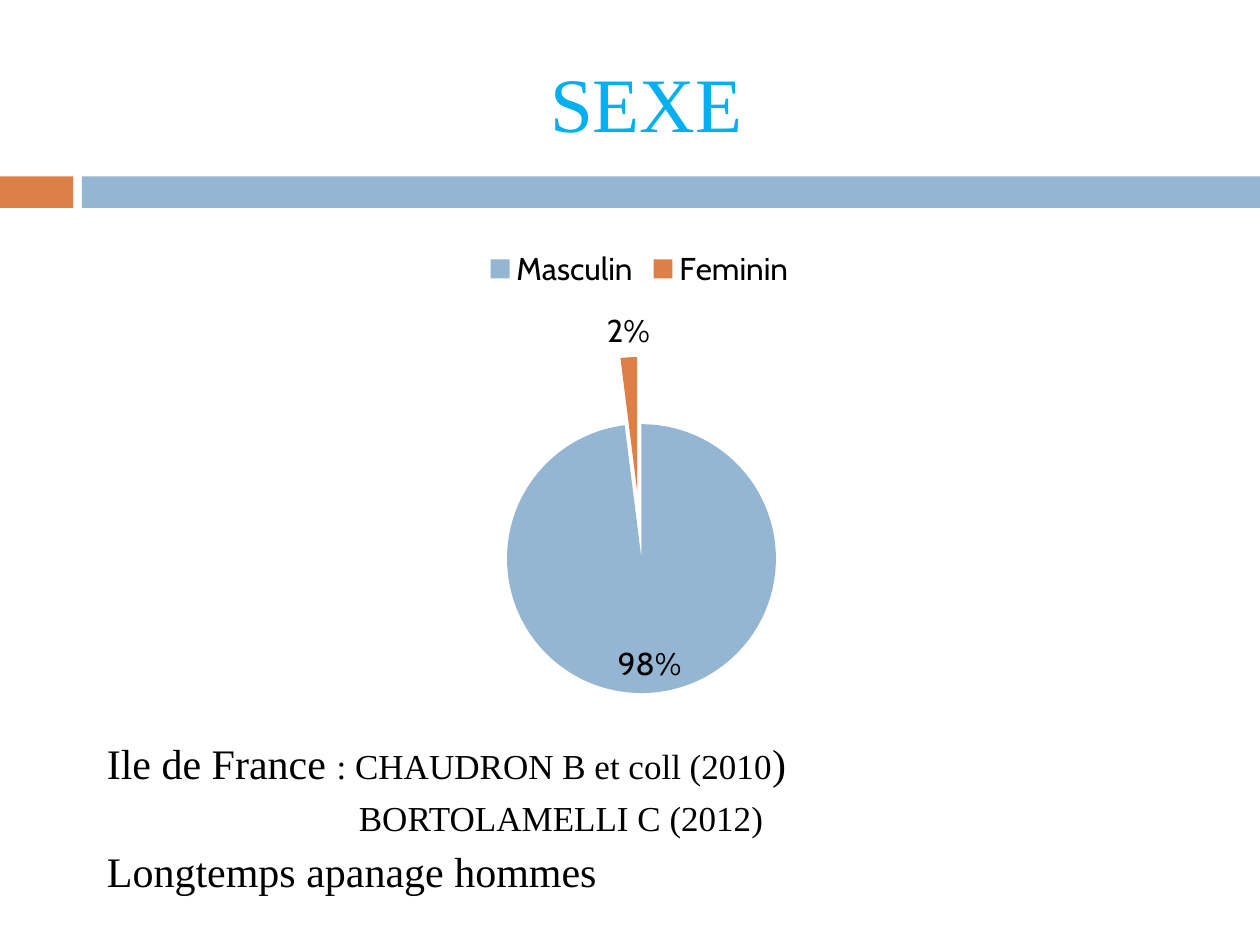
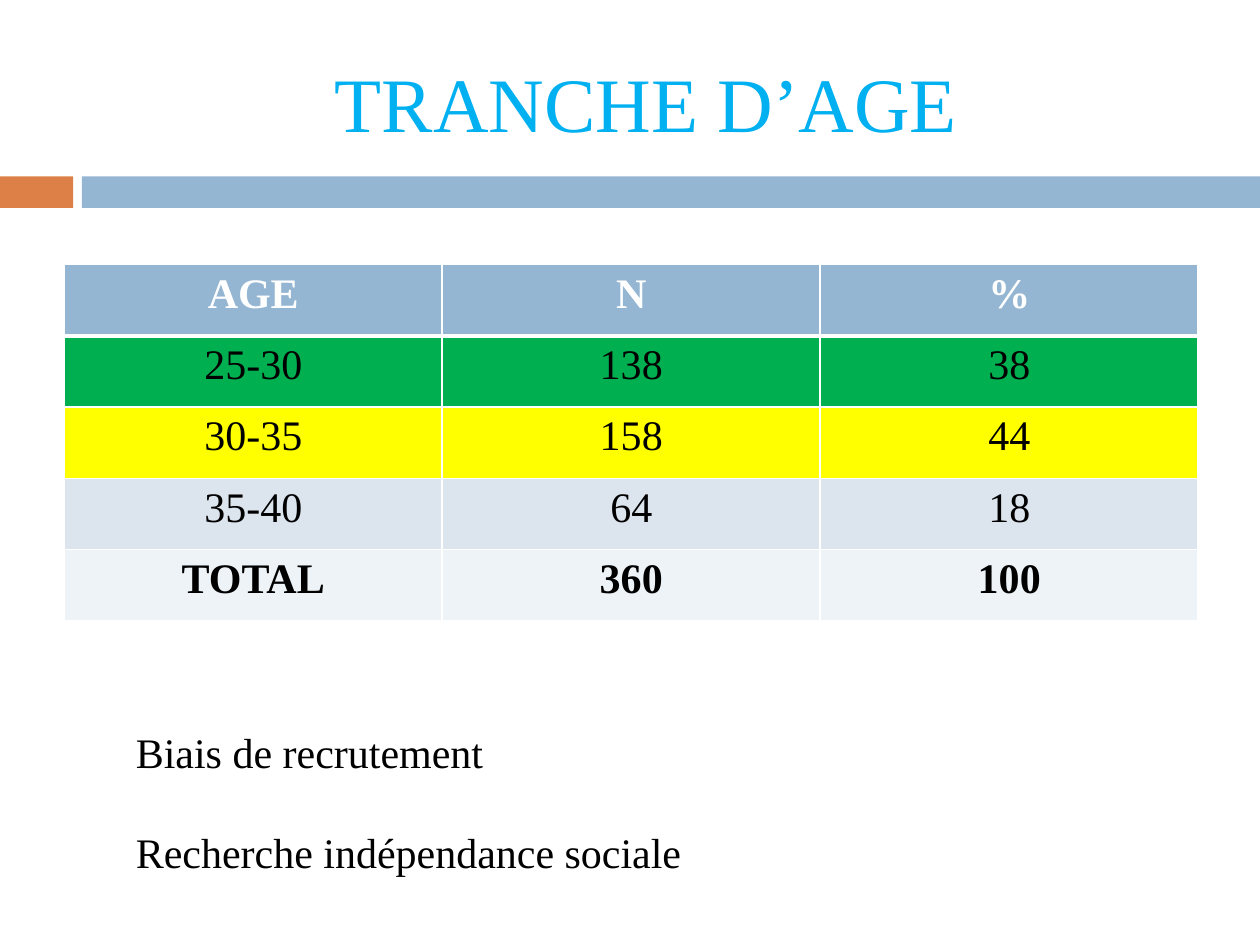
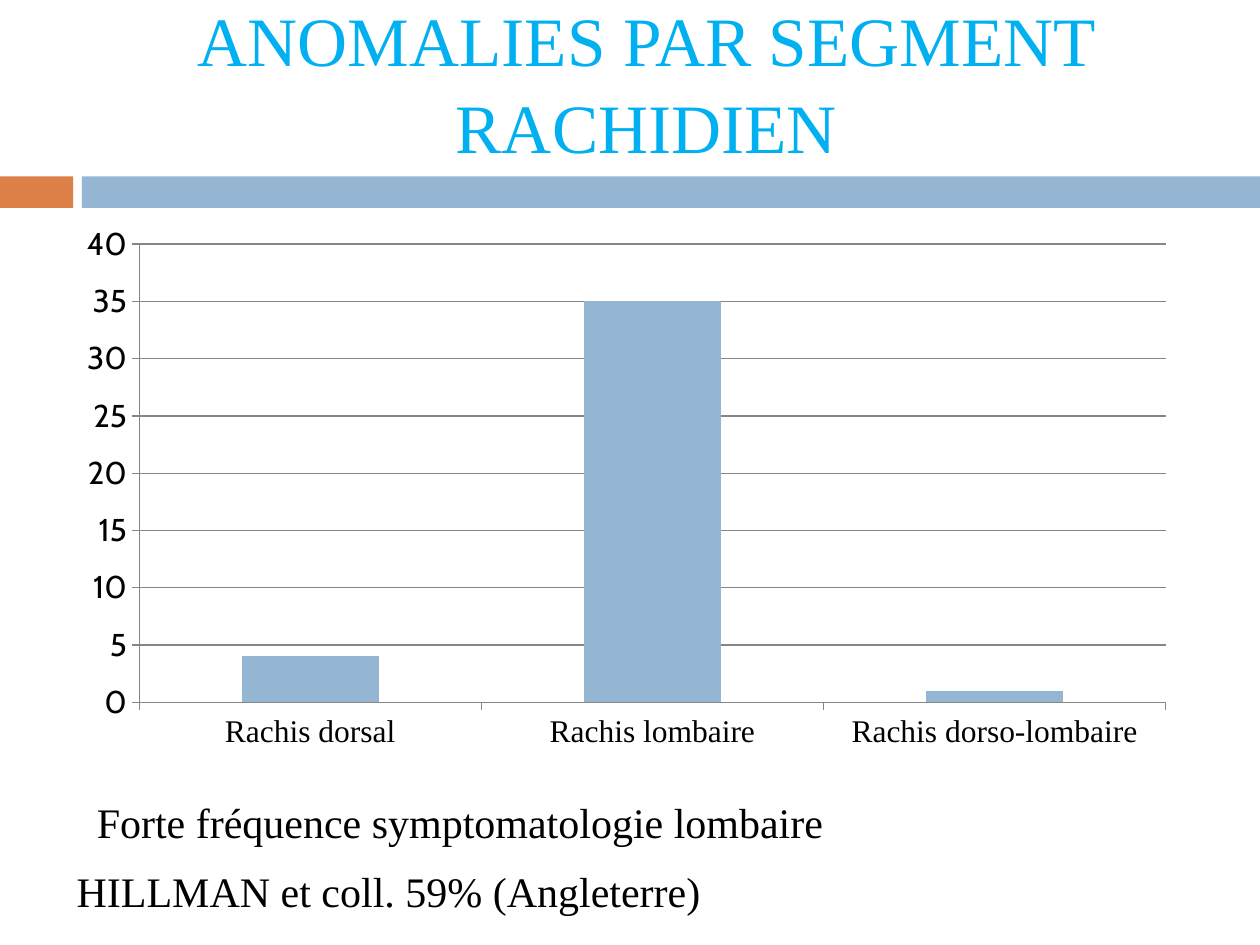
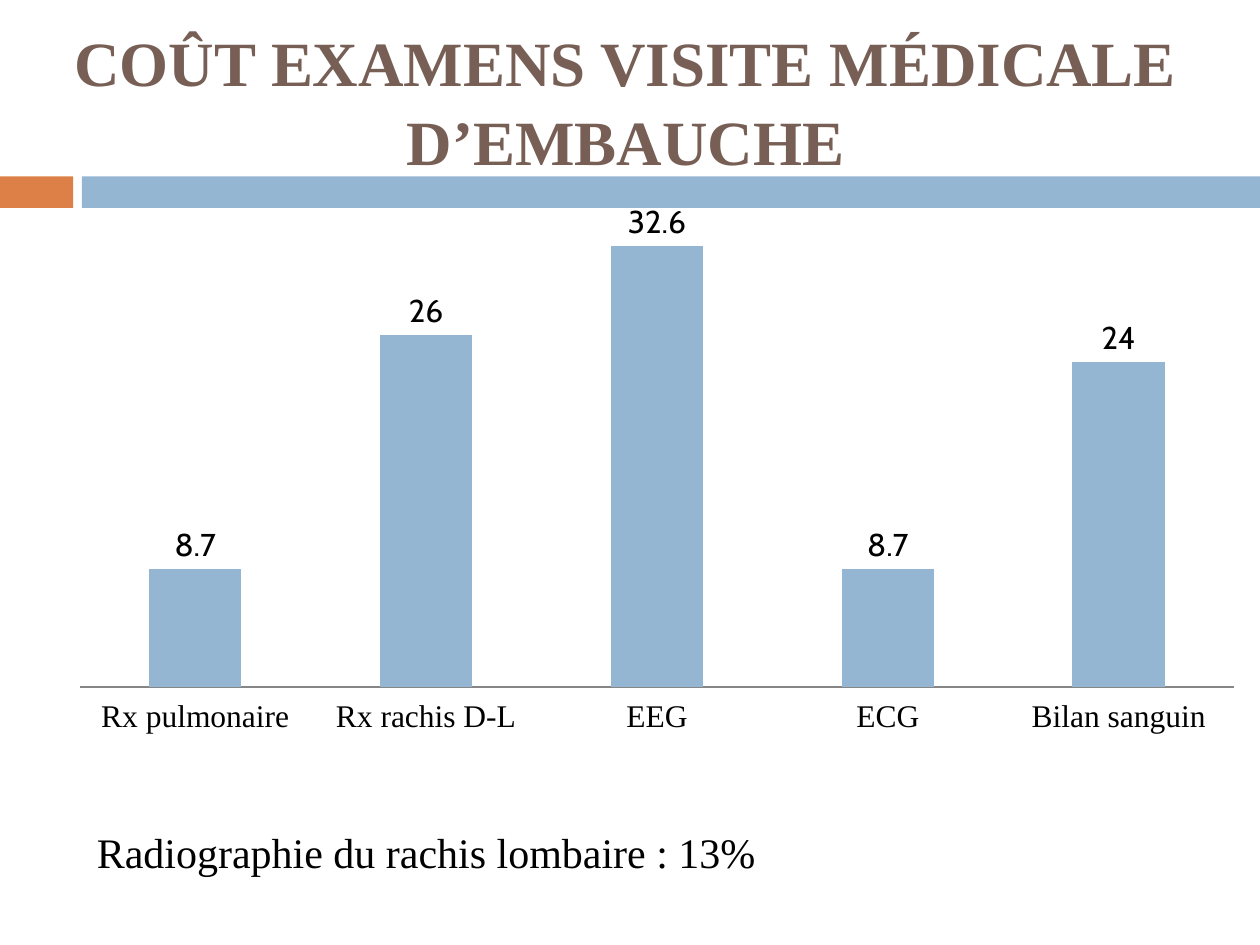
from dataclasses import dataclass
from typing import NamedTuple

from lxml.etree import SubElement
from pptx import Presentation
from pptx.chart.axis import CategoryAxis, ValueAxis
from pptx.chart.chart import Chart
from pptx.chart.data import CategoryChartData
from pptx.dml.color import RGBColor
from pptx.enum.chart import XL_CHART_TYPE, XL_LABEL_POSITION, XL_LEGEND_POSITION, XL_TICK_LABEL_POSITION, XL_TICK_MARK
from pptx.enum.shapes import MSO_SHAPE
from pptx.enum.text import MSO_ANCHOR, PP_ALIGN
from pptx.oxml import parse_xml
from pptx.oxml.ns import nsdecls, qn
from pptx.slide import Slide
from pptx.table import _Cell
from pptx.text.text import Font, _Paragraph
from pptx.util import Inches, Pt


@dataclass(frozen=True)
class Theme:
    serif: str = "Times New Roman"
    sans: str = "Cabin"
    black: str = "000000"
    white: str = "FFFFFF"
    blue: str = "94B6D2"
    orange: str = "DD8047"
    title_blue: str = "00B0F0"
    title_brown: str = "775F55"
    axis_gray: str = "868686"
    green: str = "00B050"
    yellow: str = "FFFF00"
    band_dark: str = "DCE5EE"
    band_light: str = "EEF3F7"
    title_size: float = 44
    body_size: float = 24
    source_size: float = 20
    chart_size: float = 18


THEME = Theme()


class Box(NamedTuple):
    left: float
    top: float
    width: float
    height: float

    def lengths(self) -> tuple[int, ...]:
        return tuple(Inches(value) for value in self)


class Band(NamedTuple):
    box: Box
    color: str


class TextRun(NamedTuple):
    text: str
    size: float = THEME.body_size


@dataclass(frozen=True)
class Line:
    runs: tuple[TextRun, ...]
    indent: float = 0
    space_before: float = 0


@dataclass(frozen=True)
class Title:
    text: str
    box: Box = Box(0.67, 0.25, 8.92, 1.08)
    size: float = THEME.title_size
    color: str = THEME.title_blue
    bold: bool = False
    bottom_inset: float = 0.05


class TableRow(NamedTuple):
    texts: tuple[str, str, str]
    fill: str
    color: str = THEME.black
    bold: bool = False


BANDS = (
    Band(Box(0, 1.4, 0.58, 0.25), THEME.orange),
    Band(Box(0.65, 1.4, 9.35, 0.25), THEME.blue),
)

AGE_ROWS = (
    TableRow(("AGE", "N", "%"), THEME.blue, THEME.white, True),
    TableRow(("25-30", "138", "38"), THEME.green),
    TableRow(("30-35", "158", "44"), THEME.yellow),
    TableRow(("35-40", "64", "18"), THEME.band_dark),
    TableRow(("TOTAL", "360", "100"), THEME.band_light, bold=True),
)


def style_font(font: Font, size: float, color: str = THEME.black,
               name: str = THEME.serif, bold: bool = False) -> None:
    font.name = name
    font.size = Pt(size)
    font.bold = bold
    font.color.rgb = RGBColor.from_string(color)


def add_bands(slide: Slide) -> None:
    for band in BANDS:
        shape = slide.shapes.add_shape(MSO_SHAPE.RECTANGLE, *band.box.lengths())
        shape.shadow.inherit = False
        shape.fill.solid()
        shape.fill.fore_color.rgb = RGBColor.from_string(band.color)
        shape.line.fill.background()


def add_title(slide: Slide, title: Title) -> None:
    text_frame = slide.shapes.add_textbox(*title.box.lengths()).text_frame
    text_frame.word_wrap = True
    text_frame.vertical_anchor = MSO_ANCHOR.MIDDLE
    text_frame.margin_bottom = Inches(title.bottom_inset)
    text_frame.text = title.text
    paragraph = text_frame.paragraphs[0]
    paragraph.alignment = PP_ALIGN.CENTER
    paragraph.line_spacing = 1.04
    style_font(paragraph.runs[0].font, title.size, title.color, bold=title.bold)


def start_slide(presentation: Presentation, title: Title) -> Slide:
    slide = presentation.slides.add_slide(presentation.slide_layouts[6])
    add_bands(slide)
    add_title(slide, title)
    return slide


def write_line(paragraph: _Paragraph, line: Line) -> None:
    paragraph.space_before = Pt(line.space_before)
    paragraph._p.get_or_add_pPr().set("marL", str(Inches(line.indent)))
    for text_run in line.runs:
        run = paragraph.add_run()
        run.text = text_run.text
        style_font(run.font, text_run.size)


def add_note(slide: Slide, box: Box, *lines: Line) -> None:
    text_frame = slide.shapes.add_textbox(*box.lengths()).text_frame
    text_frame.word_wrap = True
    for index, line in enumerate(lines):
        write_line(text_frame.add_paragraph() if index else text_frame.paragraphs[0], line)


def body_line(text: str, indent: float = 0) -> Line:
    return Line((TextRun(text),), indent)


def add_chart(slide: Slide, box: Box, chart_type: XL_CHART_TYPE, values: dict[str, float]) -> Chart:
    chart_data = CategoryChartData()
    chart_data.categories = values.keys()
    chart_data.add_series("Series 1", values.values())
    chart = slide.shapes.add_chart(chart_type, *box.lengths(), chart_data).chart
    chart.has_title = False
    chart.has_legend = False
    style_font(chart.font, THEME.chart_size, name=THEME.sans)
    return chart


def add_pie_chart(slide: Slide, box: Box, values: dict[str, float], colors: tuple[str, ...]) -> None:
    chart = add_chart(slide, box, XL_CHART_TYPE.PIE, values)
    chart.has_legend = True
    chart.legend.position = XL_LEGEND_POSITION.TOP
    chart.legend.include_in_layout = False
    plot = chart.plots[0]
    series = plot.series[0]
    explosion = parse_xml(f'<c:explosion {nsdecls("c")} val="25"/>')
    series._element.find(qn("c:cat")).addprevious(explosion)
    for index, color in enumerate(colors):
        fill = series.points[index].format.fill
        fill.solid()
        fill.fore_color.rgb = RGBColor.from_string(color)
    plot.has_data_labels = True
    labels = plot.data_labels
    labels.show_value = False
    labels.show_percentage = True
    labels.number_format = "0%"
    labels.number_format_is_linked = False
    labels.position = XL_LABEL_POSITION.BEST_FIT


def style_axis(axis: CategoryAxis | ValueAxis, tick_mark: XL_TICK_MARK) -> None:
    axis.major_tick_mark = tick_mark
    axis.minor_tick_mark = XL_TICK_MARK.NONE
    axis.format.line.color.rgb = RGBColor.from_string(THEME.axis_gray)
    axis.format.line.width = Pt(0.75)


def add_column_chart(slide: Slide, box: Box, values: dict[str, float], maximum: float,
                     tick_mark: XL_TICK_MARK) -> Chart:
    chart = add_chart(slide, box, XL_CHART_TYPE.COLUMN_CLUSTERED, values)
    plot = chart.plots[0]
    plot.gap_width = 150
    plot.vary_by_categories = False
    fill = plot.series[0].format.fill
    fill.solid()
    fill.fore_color.rgb = RGBColor.from_string(THEME.blue)
    style_axis(chart.category_axis, tick_mark)
    style_axis(chart.value_axis, tick_mark)
    chart.category_axis.tick_label_position = XL_TICK_LABEL_POSITION.LOW
    style_font(chart.category_axis.tick_labels.font, THEME.chart_size)
    chart.value_axis.minimum_scale = 0
    chart.value_axis.maximum_scale = maximum
    return chart


def place_plot(chart: Chart, area: Box) -> None:
    """Fix the inner plot area, given as fractions of the chart."""
    plot_area = chart._chartSpace.chart.plotArea
    for layout in plot_area.findall(qn("c:layout")):
        plot_area.remove(layout)
    layout = parse_xml(f'<c:layout {nsdecls("c")}/>')
    plot_area.insert(0, layout)
    manual = SubElement(layout, qn("c:manualLayout"))
    settings = {"layoutTarget": "inner", "xMode": "edge", "yMode": "edge"}
    settings |= {name: str(value) for name, value in zip("xywh", area)}
    for name, value in settings.items():
        SubElement(manual, qn(f"c:{name}")).set("val", value)


def add_borders(cell: _Cell, top: float, bottom: float) -> None:
    properties = cell._tc.get_or_add_tcPr()
    for side, width in {"L": 1, "R": 1, "T": top, "B": bottom}.items():
        border = SubElement(properties, qn(f"a:ln{side}"), w=str(Pt(width)))
        fill = SubElement(border, qn("a:solidFill"))
        SubElement(fill, qn("a:srgbClr"), val=THEME.white)


def add_age_table(slide: Slide, box: Box, rows: tuple[TableRow, ...]) -> None:
    table = slide.shapes.add_table(len(rows), len(rows[0].texts), *box.lengths()).table
    for row_index, row in enumerate(rows):
        for column_index, text in enumerate(row.texts):
            cell = table.cell(row_index, column_index)
            add_borders(cell, top=3 if row_index == 1 else 1, bottom=3 if row_index == 0 else 1)
            cell.fill.solid()
            cell.fill.fore_color.rgb = RGBColor.from_string(row.fill)
            cell.text_frame.text = text
            paragraph = cell.text_frame.paragraphs[0]
            paragraph.alignment = PP_ALIGN.CENTER
            style_font(paragraph.runs[0].font, THEME.body_size, row.color, bold=row.bold)


def build_sex_slide(presentation: Presentation) -> None:
    slide = start_slide(presentation, Title("SEXE"))
    add_pie_chart(slide, Box(0.51, 1.86, 9.13, 3.78), {"Masculin": 98, "Feminin": 2},
                  (THEME.blue, THEME.orange))
    add_note(
        slide, Box(0.75, 5.8, 8.5, 1.25),
        Line((TextRun("Ile de France "),
              TextRun(": CHAUDRON B et coll (2010", THEME.source_size),
              TextRun(")"))),
        Line((TextRun("BORTOLAMELLI C (2012)", THEME.source_size),), indent=2, space_before=5),
    )
    add_note(slide, Box(0.75, 6.66, 4.29, 0.5), body_line("Longtemps apanage hommes"))


def build_age_slide(presentation: Presentation) -> None:
    slide = start_slide(presentation, Title("TRANCHE D’AGE"))
    add_age_table(slide, Box(0.51, 2.1, 9, 2.83), AGE_ROWS)
    add_note(slide, Box(0.98, 5.72, 2.98, 0.5), body_line("Biais de recrutement"))
    add_note(slide, Box(0.98, 6.51, 4.74, 0.5), body_line("Recherche indépendance sociale"))


def build_spine_slide(presentation: Presentation) -> None:
    slide = start_slide(presentation, Title("ANOMALIES PAR SEGMENT RACHIDIEN", Box(0.67, 0, 8.92, 1.73),
                                            size=39.6, bottom_inset=0.5))
    values = {"Rachis dorsal": 4, "Rachis lombaire": 35, "Rachis dorso-lombaire": 1}
    chart = add_column_chart(slide, Box(0.51, 1.7, 8.92, 4.33), values, 40, XL_TICK_MARK.OUTSIDE)
    chart.value_axis.major_unit = 5
    grid_line = chart.value_axis.major_gridlines.format.line
    grid_line.color.rgb = RGBColor.from_string(THEME.axis_gray)
    grid_line.width = Pt(0.75)
    add_note(slide, Box(0.67, 6.27, 6.46, 0.5), body_line("Forte fréquence symptomatologie lombaire"))
    add_note(slide, Box(0, 6.82, 8.7, 0.5), body_line("HILLMAN et coll. 59% (Angleterre)", indent=0.51))


def build_cost_slide(presentation: Presentation) -> None:
    slide = start_slide(presentation, Title("COÛT EXAMENS VISITE MÉDICALE D’EMBAUCHE", Box(0.35, 0.25, 9.23, 1.08),
                                            size=36, color=THEME.title_brown, bold=True))
    values = {"Rx pulmonaire": 8.7, "Rx rachis D-L": 26, "EEG": 32.6, "ECG": 8.7, "Bilan sanguin": 24}
    chart = add_column_chart(slide, Box(0.35, 1.55, 9.45, 4.88), values, 35, XL_TICK_MARK.NONE)
    chart.value_axis.visible = False
    chart.value_axis.has_major_gridlines = False
    place_plot(chart, Box(0.03, 0.03, 0.97, 0.77))
    plot = chart.plots[0]
    plot.has_data_labels = True
    plot.data_labels.show_value = True
    plot.data_labels.position = XL_LABEL_POSITION.OUTSIDE_END
    add_note(slide, Box(0.67, 6.51, 7.64, 0.5), body_line("Radiographie du rachis lombaire : 13%"))


def main() -> None:
    presentation = Presentation()
    presentation.slide_width = Inches(10)
    presentation.slide_height = Inches(7.5)
    build_sex_slide(presentation)
    build_age_slide(presentation)
    build_spine_slide(presentation)
    build_cost_slide(presentation)
    presentation.save("out.pptx")


if __name__ == "__main__":
    main()
